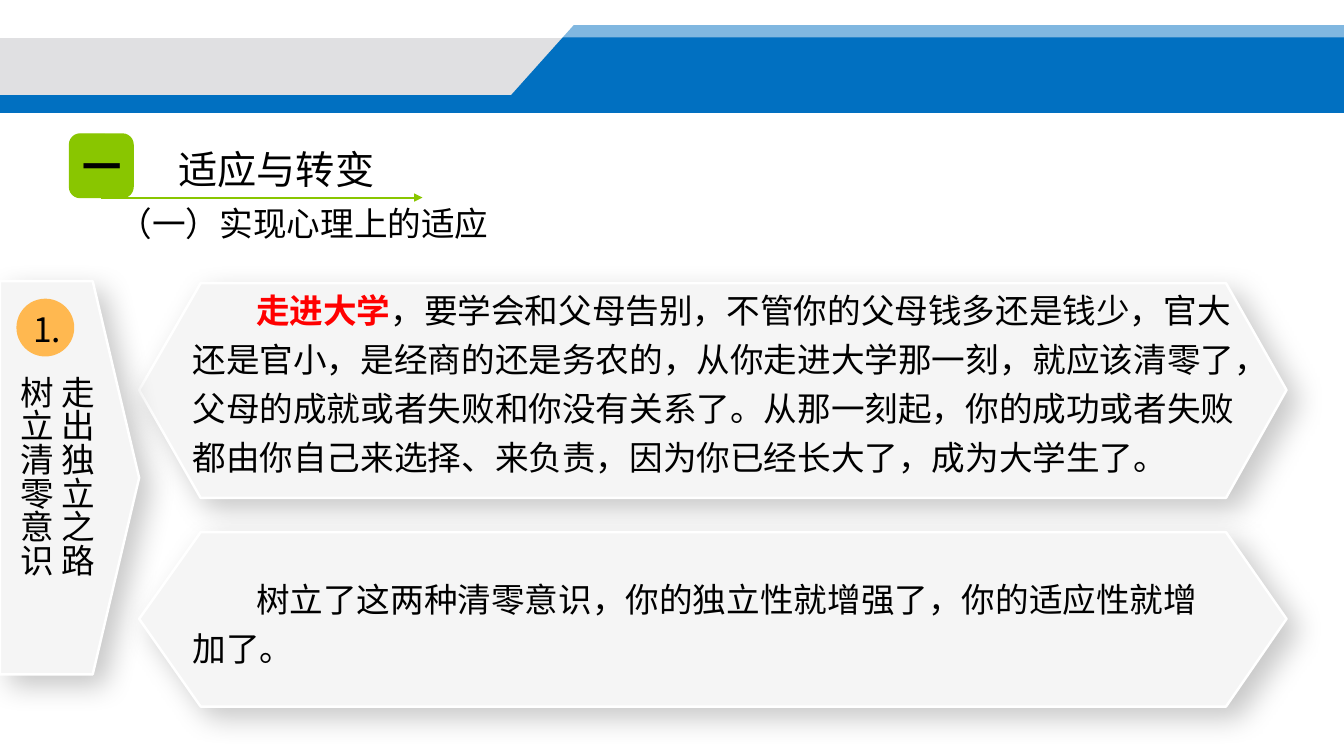
from dataclasses import dataclass

from lxml import etree
from pptx import Presentation
from pptx import util as u
from pptx.dml.color import RGBColor
from pptx.enum import shapes, text
from pptx.oxml import parse_xml
from pptx.oxml.ns import nsdecls, qn

PX = 9144


@dataclass(frozen=True)
class Theme:
    """Colours, fonts and type sizes of the slide."""
    blue: str = "0170C1"
    grey: str = "E0E0E2"
    green: str = "89C600"
    orange: str = "FFB850"
    panel: str = "F5F5F5"
    white: str = "FFFFFF"
    ink: str = "000000"
    accent: str = "FF0000"
    body_font: str = "Noto Sans CJK SC"
    title_font: str = "Cabin"
    badge_font: str = "Roboto Condensed"
    title_size: int = 28
    body_size: int = 24
    leading: int = 35


THEME = Theme()


def px(*lengths):
    """Turn pixel lengths into EMU."""
    return [u.Emu(length * PX) for length in lengths]


def paint(shape, fill, line=None, width=1):
    """Give a shape a flat fill and an optional outline."""
    shape.shadow.inherit = False
    shape.fill.solid()
    shape.fill.fore_color.rgb = RGBColor.from_string(fill)
    if line:
        shape.line.color.rgb = RGBColor.from_string(line)
        shape.line.width = u.Pt(width)
    else:
        shape.line.fill.background()


def add_preset(slide, kind, box, fill, line=None):
    """Add a painted preset shape."""
    shape = slide.shapes.add_shape(kind, *px(*box))
    paint(shape, fill, line)
    return shape


def add_outline(slide, points, fill, line=None, width=1):
    """Add a closed polygon through pixel points."""
    builder = slide.shapes.build_freeform(*points[0], scale=PX)
    builder.add_line_segments(points[1:], close=True)
    shape = builder.convert_to_shape()
    paint(shape, fill, line, width)
    return shape


def add_panel(slide, points):
    """Add a pale raised panel with a soft shadow."""
    shape = add_outline(slide, points, THEME.panel, THEME.white, 1.75)
    effects = shape._element.spPr.find(qn("a:effectLst"))
    effects.append(parse_xml(
        f'<a:outerShdw {nsdecls("a")} blurRad="254000" dist="127000" dir="2700000" '
        'algn="tl" rotWithShape="0"><a:srgbClr val="000000">'
        '<a:alpha val="21000"/></a:srgbClr></a:outerShdw>'))


def add_hexagon(slide, top, bottom):
    """Add a wide panel pointed at both ends."""
    middle = (top + bottom) // 2
    add_panel(slide, [(199, top), (1216, top), (1276, middle),
                      (1216, bottom), (199, bottom), (138, middle)])


def write(shape, *paragraphs, size=THEME.body_size, font=THEME.body_font, bold=False,
          align=text.PP_ALIGN.LEFT, anchor=text.MSO_ANCHOR.TOP, indent=0,
          leading=None, margins=True, vertical=False, lead=""):
    """Write paragraphs, the first opening with an optional highlighted lead."""
    frame = shape.text_frame
    frame.word_wrap = True
    frame.auto_size = text.MSO_AUTO_SIZE.NONE
    frame.vertical_anchor = anchor
    if not margins:
        frame.margin_left = frame.margin_right = frame.margin_top = frame.margin_bottom = 0
    if vertical:
        frame._txBody.bodyPr.set("vert", "eaVert")
    for index, content in enumerate(paragraphs):
        paragraph = frame.add_paragraph() if index else frame.paragraphs[0]
        paragraph.alignment = align
        if indent:
            properties = paragraph._p.get_or_add_pPr()
            properties.set("marL", "0")
            properties.set("indent", str(indent * PX))
        if leading:
            paragraph.line_spacing = u.Pt(leading)
        parts = [(content, THEME.ink, bold)]
        if lead and index == 0:
            parts.insert(0, (lead, THEME.accent, True))
        for words, colour, weight in parts:
            run = paragraph.add_run()
            run.text = words
            run.font.size = u.Pt(size)
            run.font.bold = weight
            run.font.color.rgb = RGBColor.from_string(colour)
            run.font.name = font
            east_asian = etree.SubElement(run._r.get_or_add_rPr(), qn("a:ea"))
            east_asian.set("typeface", THEME.body_font)


def add_text(slide, box, *paragraphs, **style):
    """Add a text box."""
    write(slide.shapes.add_textbox(*px(*box)), *paragraphs, **style)


def add_arrow(slide, source, start, end):
    """Add an arrow from the bottom middle of a shape."""
    arrow = slide.shapes.add_connector(shapes.MSO_CONNECTOR.STRAIGHT, *px(*start, *end))
    arrow.begin_connect(source, 2)
    arrow.line.color.rgb = RGBColor.from_string(THEME.green)
    arrow.line.width = u.Pt(1.5)
    tail = etree.SubElement(arrow.line._get_or_add_ln(), qn("a:tailEnd"))
    tail.set("type", "triangle")
    etree.SubElement(arrow._element.spPr, qn("a:effectLst"))


def add_header(slide):
    """Add the banner across the top."""
    rectangle = shapes.MSO_SHAPE.RECTANGLE
    add_preset(slide, rectangle, (0, 56, 1333, 56), THEME.blue, THEME.blue)
    add_preset(slide, rectangle, (0, 38, 1333, 56), THEME.grey, THEME.grey)
    add_outline(slide, [(569, 25), (1333, 25), (1333, 111), (492, 111)], THEME.blue)
    veil = add_preset(slide, rectangle, (0, 25, 1333, 12), THEME.white)
    colour = veil._element.spPr.find(qn("a:solidFill"))[0]
    etree.SubElement(colour, qn("a:alpha")).set("val", "50000")


def add_heading(slide):
    """Add the numbered title, its arrow and the subtitle."""
    middle = text.MSO_ANCHOR.MIDDLE
    badge = add_preset(slide, shapes.MSO_SHAPE.ROUNDED_RECTANGLE, (69, 133, 63, 63),
                       THEME.green, THEME.green)
    write(badge, "一", size=THEME.title_size, font=THEME.badge_font, bold=True,
          align=text.PP_ALIGN.CENTER, anchor=middle)
    add_arrow(slide, badge, (101, 196), (419, 196))
    title = slide.shapes.title
    title.left, title.top, title.width, title.height = px(167, 139, 217, 57)
    write(title, "适应与转变", size=THEME.title_size, font=THEME.title_font, anchor=middle)
    add_text(slide, (45, 188, 454, 59), "（一）实现心理上的适应",
             indent=63, leading=THEME.leading)


def add_side_tag(slide):
    """Add the numbered tag with vertical text."""
    add_panel(slide, [(0, 279), (92, 279), (138, 474), (92, 669), (0, 669)])
    add_preset(slide, shapes.MSO_SHAPE.OVAL, (17, 297, 56, 56), THEME.orange, THEME.orange)
    add_text(slide, (23, 302, 62, 50), "1.")
    add_text(slide, (0, 363, 101, 278), "走出独立之路", "树立清零意识", vertical=True)


def main():
    """Build and save the slide."""
    presentation = Presentation()
    presentation.slide_width, presentation.slide_height = px(1333, 750)
    slide = presentation.slides.add_slide(presentation.slide_layouts[5])
    add_header(slide)
    add_heading(slide)
    body = dict(indent=63, leading=THEME.leading, margins=False)
    add_hexagon(slide, 281, 494)
    add_text(slide, (191, 279, 1043, 227),
             "，要学会和父母告别，不管你的父母钱多还是钱少，官大还是官小，是经商的还是务农的，"
             "从你走进大学那一刻，就应该清零了，父母的成就或者失败和你没有关系了。从那一刻起，"
             "你的成功或者失败都由你自己来选择、来负责，因为你已经长大了，成为大学生了。",
             lead="走进大学", **body)
    add_side_tag(slide)
    add_hexagon(slide, 528, 701)
    add_text(slide, (191, 569, 1010, 90),
             "树立了这两种清零意识，你的独立性就增强了，你的适应性就增加了。",
             anchor=text.MSO_ANCHOR.MIDDLE, **body)
    presentation.save("out.pptx")


if __name__ == "__main__":
    main()
